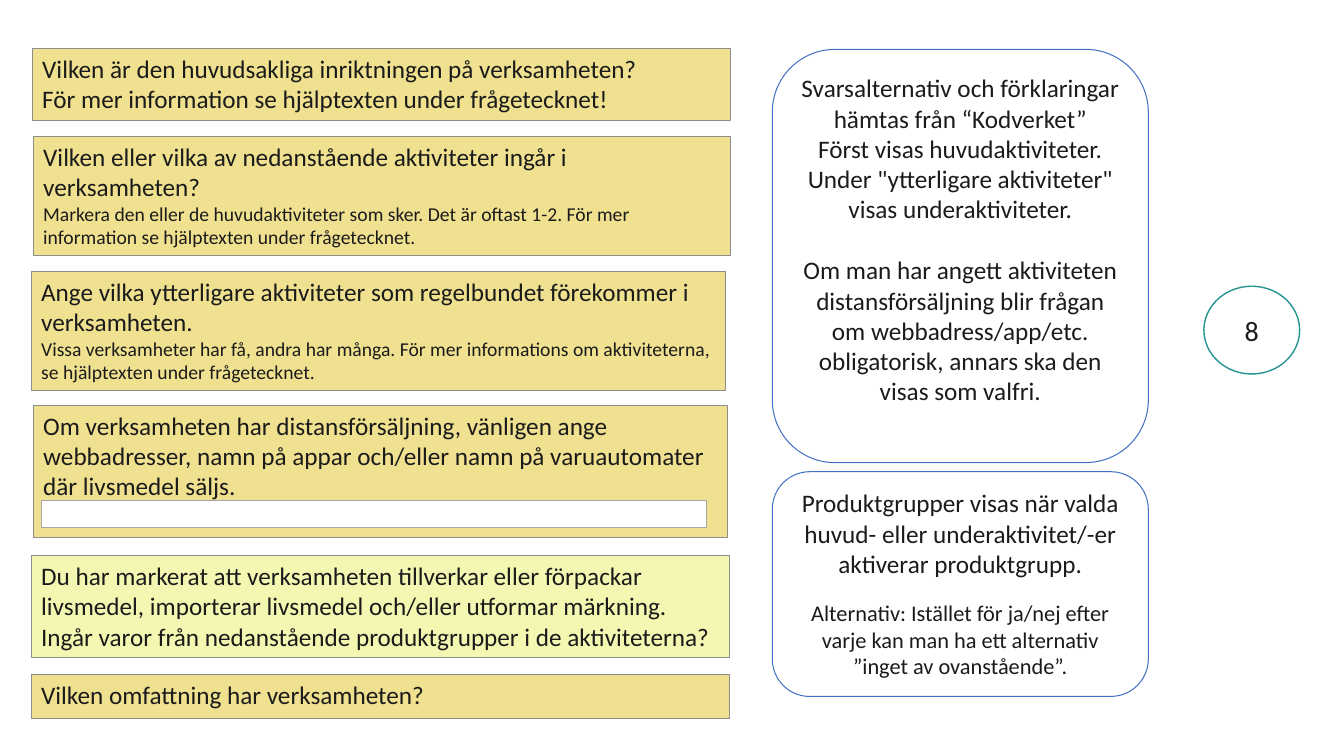
"""Build the slide with form questions, explanations and a step number."""
from pptx import Presentation
from pptx.dml.color import RGBColor
from pptx.enum import shapes, text
from pptx.util import Inches, Pt

COLORS = {
    "ink": "1B1B1B", "white": "FFFFFF", "question": "F0E190", "product": "F4F7B2",
    "question_line": "8D8D8D", "note_line": "4472C4", "step_line": "259490",
    "field_line": "A6A6A6",
}
SHAPE = shapes.MSO_SHAPE
LEFT, CENTER = text.PP_ALIGN.LEFT, text.PP_ALIGN.CENTER
TOP, MIDDLE = text.MSO_ANCHOR.TOP, text.MSO_ANCHOR.MIDDLE

QUESTIONS = [
    ((0.32, 0.48, 6.92, 0.71), "question", [
        [("Vilken är den huvudsakliga inriktningen på verksamheten?", 18)],
        [("För mer information se hjälptexten under frågetecknet!", 18)]]),
    ((0.33, 1.35, 6.91, 1.18), "question", [
        [("Vilken eller vilka av nedanstående aktiviteter ingår i  verksamheten?", 18),
         ("Markera den eller de huvudaktiviteter som sker. Det är oftast 1-2. "
          "För mer information se hjälptexten under frågetecknet.", 14)]]),
    ((0.31, 2.69, 6.88, 1.18), "question", [
        [("Ange vilka ytterligare aktiviteter som regelbundet förekommer i "
          "verksamheten.", 18)],
        [("Vissa verksamheter har få, andra har många. För mer informations om "
          "aktiviteterna, se hjälptexten under frågetecknet.", 14)]]),
    ((0.33, 4.02, 6.88, 1.31), "question", [
        [("Om verksamheten har distansförsäljning, vänligen ange webbadresser, namn "
          "på appar och/eller namn på varuautomater där livsmedel säljs.", 18)]]),
    ((0.31, 5.51, 6.92, 1.01), "product", [
        [("Du har markerat att verksamheten tillverkar eller förpackar livsmedel, "
          "importerar livsmedel och/eller utformar märkning.", 18)],
        [("Ingår varor från nedanstående produktgrupper i de aktiviteterna?", 18)]]),
    ((0.31, 6.69, 6.92, 0.44), "question", [
        [("Vilken omfattning har verksamheten?", 18)]]),
]

NOTES = [
    ((7.66, 0.49, 3.73, 4.1), 22, [
        [("Svarsalternativ och förklaringar hämtas från “Kodverket”", 18)],
        [("Först visas huvudaktiviteter.", 18)],
        [('Under "ytterligare aktiviteter" visas underaktiviteter.', 18)],
        [("Om man har angett aktiviteten distansförsäljning blir frågan om "
          "webbadress/app/etc. obligatorisk, annars ska den visas som valfri.", 18)]]),
    ((7.66, 4.68, 3.73, 2.23), 14.6, [
        [("Produktgrupper visas när valda huvud- eller underaktivitet/-er aktiverar "
          "produktgrupp.", 18)],
        [("Alternativ: Istället för ja/nej efter varje kan man ha ett alternativ "
          "”inget av ovanstående”.", 16)]]),
]


def color(name):
    """Return the named colour."""
    return RGBColor.from_string(COLORS[name])


def add_box(slide, kind, place, fill, line, width):
    """Add an outlined shape, unfilled when fill is None."""
    shape = slide.shapes.add_shape(kind, *map(Inches, place))
    shape.shadow.inherit = False
    if fill:
        shape.fill.solid()
        shape.fill.fore_color.rgb = color(fill)
    else:
        shape.fill.background()
    shape.line.color.rgb = color(line)
    shape.line.width = Pt(width)
    return shape


def write(shape, paragraphs, align=LEFT, anchor=TOP, last_gap=0):
    """Write paragraphs of (words, size) runs, with a gap before the last one."""
    frame = shape.text_frame
    frame.word_wrap = True
    frame.vertical_anchor = anchor
    for index, runs in enumerate(paragraphs):
        paragraph = frame.add_paragraph() if index else frame.paragraphs[0]
        paragraph.alignment = align
        if last_gap and index == len(paragraphs) - 1:
            paragraph.space_before = Pt(last_gap)
        for position, (words, size) in enumerate(runs):
            if position:
                paragraph.add_line_break()
            run = paragraph.add_run()
            run.text = words
            run.font.name = "Calibri"
            run.font.size = Pt(size)
            run.font.color.rgb = color("ink")


def add_question(slide, place, fill, paragraphs):
    """Add a filled question box."""
    shape = add_box(slide, SHAPE.RECTANGLE, place, fill, "question_line", 0.5)
    write(shape, paragraphs)


def add_note(slide, place, last_gap, paragraphs):
    """Add a rounded explanation with centred text."""
    shape = add_box(slide, SHAPE.ROUNDED_RECTANGLE, place, None, "note_line", 0.75)
    write(shape, paragraphs, CENTER, last_gap=last_gap)


def add_step(slide, place, number):
    """Add a circled step number."""
    shape = add_box(slide, SHAPE.OVAL, place, "white", "step_line", 1)
    write(shape, [[(number, 20)]], CENTER, MIDDLE)


def main():
    """Build and save the presentation."""
    presentation = Presentation()
    presentation.slide_width = Inches(13.33)
    presentation.slide_height = Inches(7.5)
    slide = presentation.slides.add_slide(presentation.slide_layouts[6])
    for question in QUESTIONS:
        add_question(slide, *question)
    for note in NOTES:
        add_note(slide, *note)
    add_step(slide, (11.94, 2.84, 0.95, 0.87), "8")
    add_box(slide, SHAPE.RECTANGLE, (0.41, 4.97, 6.6, 0.26), "white", "field_line", 0.75)
    presentation.save("out.pptx")


if __name__ == "__main__":
    main()
